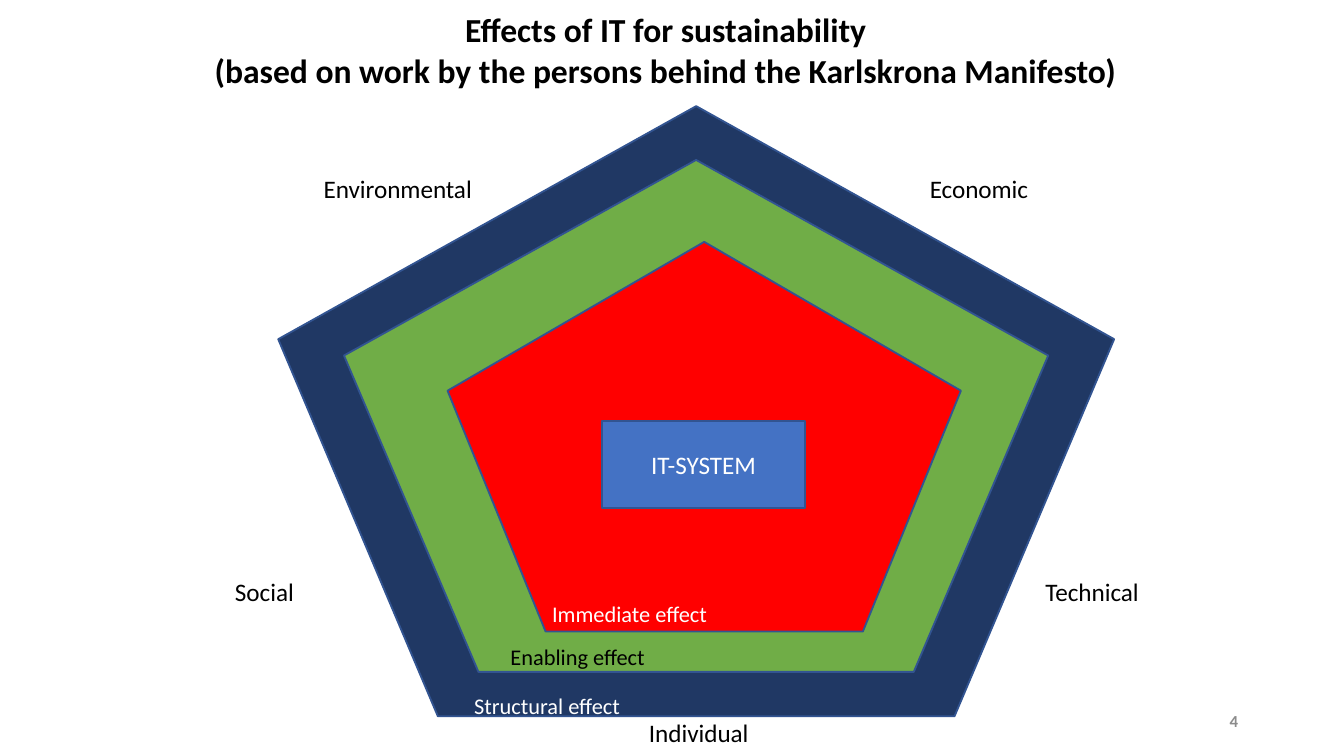
"""Build the slide on the effects of IT for sustainability."""
import pptx
import pptx.dml.color
import pptx.enum.shapes
import pptx.enum.text
import pptx.util

Inches = pptx.util.Inches
Shape = pptx.enum.shapes.MSO_SHAPE
Align = pptx.enum.text.PP_ALIGN
Anchor = pptx.enum.text.MSO_ANCHOR

COLORS = {
    "black": "000000",
    "white": "FFFFFF",
    "gray": "8C8C8C",
    "navy": "203864",
    "green": "70AD47",
    "red": "FF0000",
    "blue": "4472C4",
    "edge": "325491",
}


def color(name):
    return pptx.dml.color.RGBColor.from_string(COLORS[name])


def write(shape, text, size=13.5, tint="black", bold=False,
          align=Align.LEFT, anchor=Anchor.TOP):
    frame = shape.text_frame
    frame.word_wrap = True
    frame.vertical_anchor = anchor
    frame.text = text
    for para in frame.paragraphs:
        para.alignment = align
        for run in para.runs:
            font = run.font
            font.name = "Calibri"
            font.size = pptx.util.Pt(size)
            font.bold = bold
            font.color.rgb = color(tint)


def label(shapes, box, text, **style):
    write(shapes.add_textbox(*map(Inches, box)), text, **style)


def block(shapes, kind, box, fill):
    shape = shapes.add_shape(kind, *map(Inches, box))
    shape.shadow.inherit = False
    shape.fill.solid()
    shape.fill.fore_color.rgb = color(fill)
    shape.line.color.rgb = color("edge")
    shape.line.width = pptx.util.Pt(1)
    return shape


def ring(shapes, box, fill, spot, text, tint):
    group = shapes.add_group_shape().shapes
    block(group, Shape.REGULAR_PENTAGON, box, fill)
    label(group, (*spot, 0.3), text, size=12, tint=tint)


def main():
    deck = pptx.Presentation()
    deck.slide_width = Inches(10)
    deck.slide_height = Inches(10 * 9 / 16)
    shapes = deck.slides.add_slide(deck.slide_layouts[6]).shapes

    sides = [
        ("Environmental", 2.31, 1.24, 1.62),
        ("Technical", 7.68, 4.24, 1.02),
        ("Economic", 6.82, 1.24, 1.87),
        ("Individual", 4.73, 5.29, 1.26),
        ("Social", 1.65, 4.24, 1.46),
    ]
    for text, left, top, width in sides:
        label(shapes, (left, top, width, 0.33), text)

    label(shapes, (0.73, 0.02, 8.45, 0.71),
          "Effects of IT for sustainability\n"
          "(based on work by the persons behind the Karlskrona Manifesto)",
          size=18, bold=True, align=Align.CENTER)

    rings = [
        ((2.07, 0.79, 6.22, 4.54), "navy",
         (3.43, 5.1, 1.67), "Structural effect", "white"),
        ((2.56, 1.19, 5.24, 3.81), "green",
         (3.7, 4.74, 1.83), "Enabling effect", "black"),
        ((3.33, 1.8, 3.82, 2.9), "red",
         (4.01, 4.42, 1.74), "Immediate effect", "white"),
    ]
    for item in rings:
        ring(shapes, *item)

    core = block(shapes, Shape.RECTANGLE, (4.48, 3.13, 1.51, 0.65), "blue")
    write(core, "IT-SYSTEM", tint="white",
          align=Align.CENTER, anchor=Anchor.MIDDLE)
    label(shapes, (7.06, 5.21, 2.25, 0.3), "4", size=9, tint="gray",
          bold=True, align=Align.RIGHT, anchor=Anchor.MIDDLE)

    deck.save("out.pptx")


if __name__ == "__main__":
    main()
